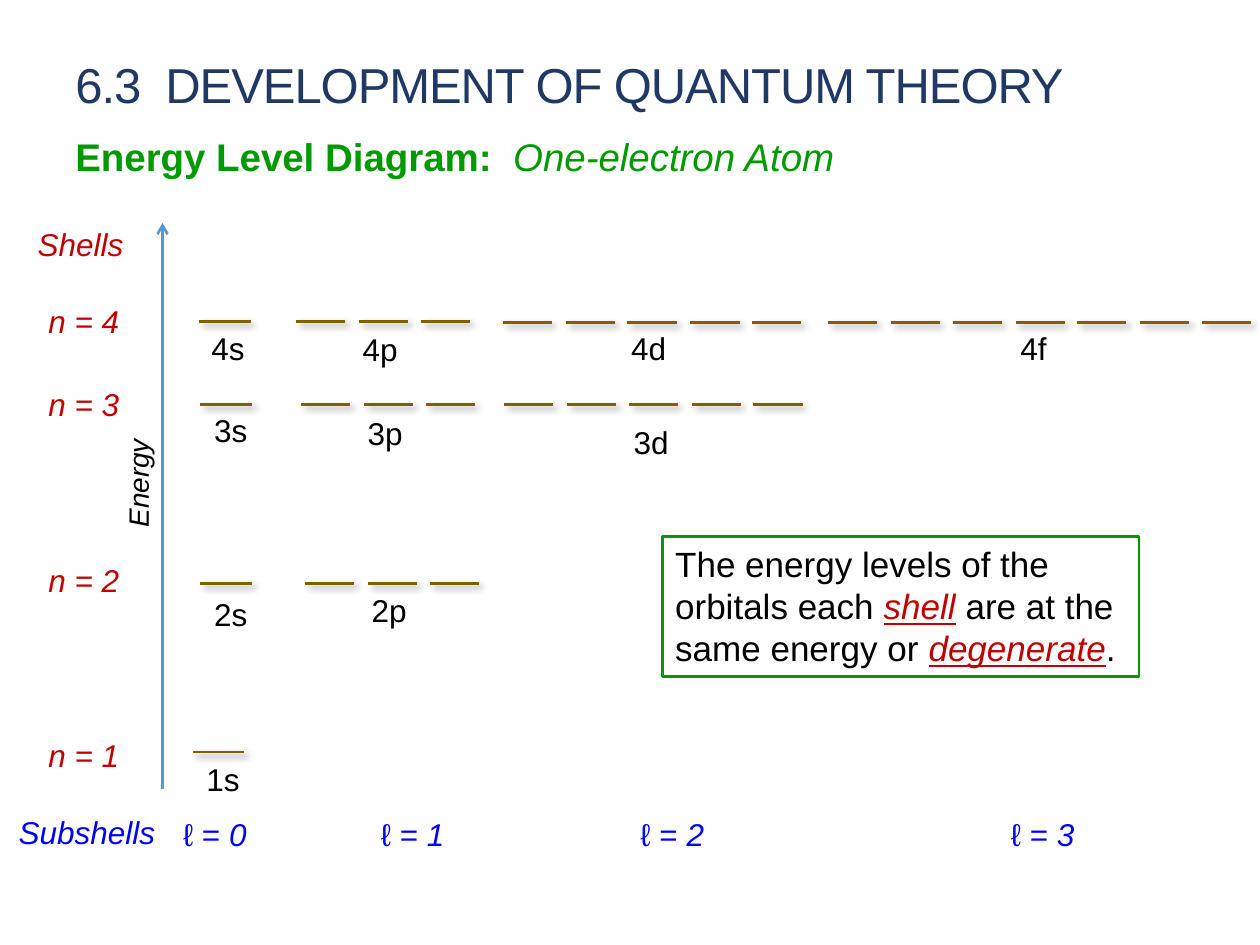
from dataclasses import dataclass

from lxml import etree
from pptx import Presentation, util as u
from pptx.dml.color import RGBColor
from pptx.enum import shapes, text
from pptx.oxml import parse_xml
from pptx.oxml.ns import nsdecls, qn

PX = 9144

BLACK = RGBColor(0, 0, 0)
NAVY = RGBColor(0x20, 0x38, 0x64)
GREEN = RGBColor(0, 0x99, 0)
RED = RGBColor(0xC0, 0, 0)
BLUE = RGBColor(0, 0, 0xFF)
BROWN = RGBColor(0x80, 0x60, 0)
SKY = RGBColor(0x56, 0x98, 0xD3)

SHADOW = (
    f'<a:effectLst {nsdecls("a")}>'
    '<a:outerShdw blurRad="50800" dist="38100" dir="2700000" algn="tl" rotWithShape="0">'
    '<a:srgbClr val="000000"><a:alpha val="40000"/></a:srgbClr>'
    '</a:outerShdw></a:effectLst>'
)
NO_SHADOW = f'<a:effectLst {nsdecls("a")}/>'


@dataclass
class Run:
    text: str
    color: RGBColor = BLACK
    bold: bool = False
    italic: bool = False
    underline: bool = False


@dataclass
class Subshell:
    name: str
    x: int
    y: int
    orbitals: int
    label_x: int
    label_y: int


SUBSHELLS = [
    Subshell("4s", 158, 255, 1, 158, 256),
    Subshell("4f", 657, 256, 7, 800, 256),
    Subshell("4d", 399, 256, 5, 491, 256),
    Subshell("3s", 159, 321, 1, 160, 321),
    Subshell("2s", 159, 463, 1, 160, 467),
    Subshell("1s", 153, 597, 1, 154, 598),
    Subshell("4p", 235, 255, 3, 278, 257),
    Subshell("3p", 239, 321, 3, 282, 324),
    Subshell("2p", 242, 463, 3, 285, 464),
    Subshell("3d", 400, 321, 5, 493, 331),
]
SHELL_TOPS = {1: 579, 2: 440, 3: 301, 4: 235}
SUBSHELL_LEFTS = [135, 292, 498, 792]


def write(sp, runs: list[Run], size: int, centre: bool = False) -> None:
    p = sp.text_frame.paragraphs[0]
    p.alignment = text.PP_ALIGN.CENTER if centre else text.PP_ALIGN.LEFT
    for run in runs:
        r = p.add_run()
        r.text = run.text
        f = r.font
        f.name, f.size = "Arial", u.Pt(size)
        f.color.rgb = run.color
        f.bold, f.italic, f.underline = run.bold, run.italic, run.underline


def add_text(parent, x: int, y: int, w: int, h: int, runs: list[Run],
             size: int = 18, centre: bool = False, wrap: bool = True):
    sp = parent.add_textbox(x * PX, y * PX, w * PX, h * PX)
    tf = sp.text_frame
    tf.word_wrap = wrap
    if not wrap:
        tf.auto_size = text.MSO_AUTO_SIZE.SHAPE_TO_FIT_TEXT
    write(sp, runs, size, centre)
    return sp


def add_line(parent, x1: int, y1: int, x2: int, y2: int, color: RGBColor, effects: str):
    sp = parent.add_connector(shapes.MSO_CONNECTOR.STRAIGHT,
                              x1 * PX, y1 * PX, x2 * PX, y2 * PX)
    sp.line.color.rgb = color
    sp.line.width = u.Pt(1.5)
    sp._element.spPr.append(parse_xml(effects))
    return sp


def add_subshell(parent, sub: Subshell) -> None:
    group = parent.add_group_shape().shapes
    add_text(group, sub.label_x, sub.label_y, 52, 52, [Run(sub.name)])
    length = 41 if sub.orbitals == 1 else 39
    for i in range(sub.orbitals):
        x = sub.x + (99 * i + 1) // 2
        add_line(group, x, sub.y, x + length, sub.y, BROWN, SHADOW)


def add_note(parent) -> None:
    sp = parent.add_shape(shapes.MSO_SHAPE.RECTANGLE, 526 * PX, 426 * PX, 378 * PX, 111 * PX)
    sp.shadow.inherit = False
    sp.fill.background()
    sp.line.color.rgb = GREEN
    sp.line.width = u.Pt(1.5)
    tf = sp.text_frame
    tf.word_wrap = True
    tf.auto_size = text.MSO_AUTO_SIZE.SHAPE_TO_FIT_TEXT
    tf.vertical_anchor = text.MSO_ANCHOR.TOP
    write(sp, [
        Run("The energy levels of the orbitals each "),
        Run("shell", RED, italic=True, underline=True),
        Run(" are at the same energy or "),
        Run("degenerate", RED, italic=True, underline=True),
        Run("."),
    ], 20)


def main() -> None:
    prs = Presentation()
    prs.slide_width, prs.slide_height = 1000 * PX, 750 * PX
    s = prs.slides.add_slide(prs.slide_layouts[6]).shapes

    energy = add_text(s, 64, 365, 91, 37, [Run("Energy", italic=True)], 16, True, False)
    energy.rotation = 270
    axis = add_line(s, 129, 626, 129, 177, SKY, NO_SHADOW)
    etree.SubElement(axis._element.spPr.find(qn("a:ln")), qn("a:tailEnd"), type="arrow")

    for sub in SUBSHELLS:
        add_subshell(s, sub)

    title = add_text(s, 50, 38, 933, 57, [Run("6.3  DEVELOPMENT OF QUANTUM THEORY", NAVY)], 28)
    title.text_frame.paragraphs[0].runs[0]._r.get_or_add_rPr().set("spc", "-60")
    add_text(s, 50, 101, 933, 91, [
        Run("Energy Level Diagram:  ", GREEN, bold=True),
        Run("One-electron Atom", GREEN, italic=True),
    ], 22)

    add_text(s, 20, 174, 89, 40, [Run("Shells", RED, italic=True)], wrap=False)
    add_text(s, 5, 640, 130, 40, [Run("Subshells", BLUE, italic=True)], wrap=False)
    for n, y in SHELL_TOPS.items():
        add_text(s, 28, y, 77, 40, [Run(f"n = {n}", RED, italic=True)], centre=True, wrap=False)
    for l, x in enumerate(SUBSHELL_LEFTS):
        add_text(s, x, 642, 78, 40, [Run("ℓ = ", BLUE), Run(f"{l} ", BLUE, italic=True)],
                 centre=True, wrap=False)
    add_note(s)

    prs.save("out.pptx")


if __name__ == "__main__":
    main()
